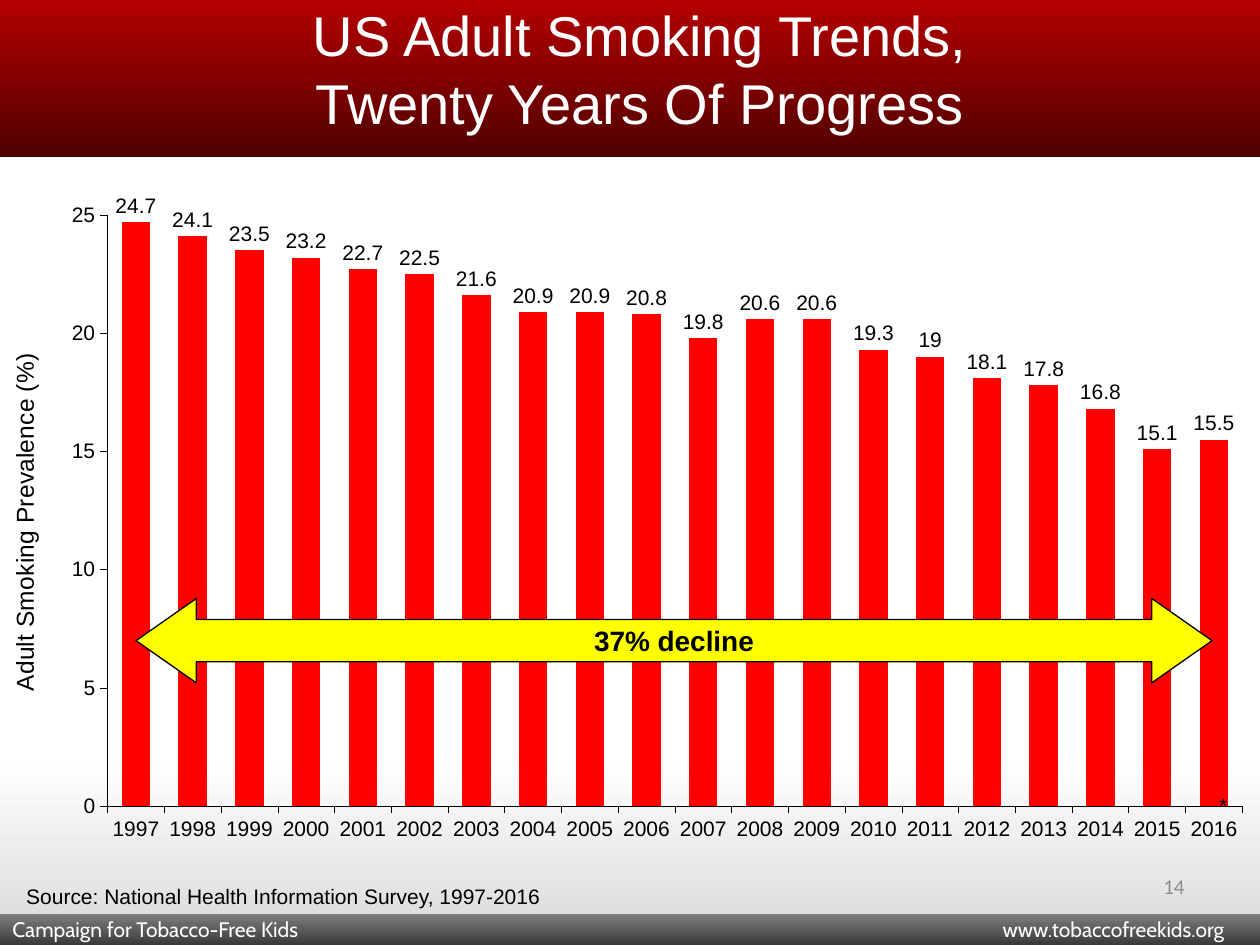
from lxml import etree
from pptx import Presentation
from pptx.chart.data import CategoryChartData
from pptx.dml.color import RGBColor
from pptx.enum import chart as ch, shapes, text
from pptx.oxml import parse_xml
from pptx.oxml.ns import nsdecls, qn
from pptx.util import Inches, Pt

COLORS = {
    "white": "FFFFFF", "black": "000000", "bar": "FF0000", "arrow": "FFFF00",
    "page_end": "D9D9D9", "number": "8C8C8C",
    "band_top": "B40000", "band_end": "500000",
    "footer_top": "808080", "footer_end": "3A3A3A",
}
RATES = [24.7, 24.1, 23.5, 23.2, 22.7, 22.5, 21.6, 20.9, 20.9, 20.8,
         19.8, 20.6, 20.6, 19.3, 19, 18.1, 17.8, 16.8, 15.1, 15.5]


def style(font, size, color="black", name="Arial", bold=False):
    font.size, font.name, font.bold = Pt(size), name, bold
    font.color.rgb = RGBColor.from_string(COLORS[color])


def shade_down(fill, top, end, start=0):
    """Fill with a gradient from top colour to end colour, beginning at start."""
    fill.gradient()
    fill.gradient_angle = 270
    for stop, color, pos in zip(fill.gradient_stops, (top, end), (start, 1)):
        stop.color.rgb = RGBColor.from_string(COLORS[color])
        stop.position = pos


prs = Presentation()
prs.slide_width, prs.slide_height = Inches(10), Inches(7.5)
s = prs.slides.add_slide(prs.slide_layouts[5])
shade_down(s.background.fill, "white", "page_end", 0.8)

# Title band and footer band
bands = []
for top, height, name in [(0, 1.25, "band"), (7.25, 0.25, "footer")]:
    sp = s.shapes.add_shape(shapes.MSO_SHAPE.RECTANGLE, 0, Inches(top),
                            Inches(10), Inches(height))
    sp.shadow.inherit = False
    sp.line.fill.background()
    shade_down(sp.fill, name + "_top", name + "_end")
    bands.append(sp)
band, footer = bands

tf = footer.text_frame
tf.vertical_anchor = text.MSO_ANCHOR.MIDDLE
tf.margin_top = tf.margin_bottom = 0
p = tf.paragraphs[0]
p.text = "Campaign for Tobacco-Free Kids\twww.tobaccofreekids.org"
p.alignment = text.PP_ALIGN.LEFT
tabs = etree.SubElement(p._p.get_or_add_pPr(), qn("a:tabLst"))
etree.SubElement(tabs, qn("a:tab"), pos=str(Inches(9.62)), algn="r")
for r in p.runs:
    style(r.font, 12, "white", "Cabin")

# Title
title = s.shapes.title
band.element.addnext(title.element)
title.left, title.top = Inches(0.08), Inches(0.08)
title.width, title.height = Inches(10), Inches(0.92)
tf = title.text_frame
tf.text = "US Adult Smoking Trends,\vTwenty Years Of Progress"
tf.vertical_anchor = text.MSO_ANCHOR.MIDDLE
tf.paragraphs[0].alignment = text.PP_ALIGN.CENTER
for r in tf.paragraphs[0].runs:
    style(r.font, 32, "white")

# Chart
data = CategoryChartData()
data.categories = [str(1997 + i) for i in range(len(RATES))]
data.add_series("Series 1", RATES)
chart = s.shapes.add_chart(ch.XL_CHART_TYPE.COLUMN_CLUSTERED, Inches(-0.06),
                           Inches(1.47), Inches(10.04), Inches(5.5), data).chart
chart.has_legend = chart.has_title = False
style(chart.font, 12)

for axis in (chart.category_axis, chart.value_axis):
    axis.has_major_gridlines = False
    axis.major_tick_mark = ch.XL_TICK_MARK.OUTSIDE
    axis.minor_tick_mark = ch.XL_TICK_MARK.NONE
    axis.format.line.width = Pt(0.3)
    axis.format.line.color.rgb = RGBColor.from_string(COLORS["black"])
    style(axis.tick_labels.font, 12)
chart.category_axis.tick_label_position = ch.XL_TICK_LABEL_POSITION.LOW

axis = chart.value_axis
axis.minimum_scale, axis.maximum_scale, axis.major_unit = 0, 25, 5
tf = axis.axis_title.text_frame
tf.text = "Adult Smoking Prevalence (%)"
style(tf.paragraphs[0].runs[0].font, 14)

plot = chart.plots[0]
plot.gap_width = 100
plot.vary_by_categories = False
fill = plot.series[0].format.fill
fill.solid()
fill.fore_color.rgb = RGBColor.from_string(COLORS["bar"])
plot.has_data_labels = True
labels = plot.data_labels
labels.show_value = True
labels.position = ch.XL_LABEL_POSITION.OUTSIDE_END
style(labels.font, 12)

area = chart.element.find(".//" + qn("c:plotArea"))
for old in area.findall(qn("c:layout")):
    area.remove(old)
area.insert(0, parse_xml(
    f'<c:layout {nsdecls("c")}><c:manualLayout><c:layoutTarget val="inner"/>'
    '<c:xMode val="edge"/><c:yMode val="edge"/><c:x val="0.091"/>'
    '<c:y val="0.043"/><c:w val="0.897"/><c:h val="0.853"/>'
    '</c:manualLayout></c:layout>'))

# Decline arrow
arrow = s.shapes.add_shape(shapes.MSO_SHAPE.LEFT_RIGHT_ARROW, Inches(1.08),
                           Inches(4.75), Inches(8.54), Inches(0.67))
arrow.adjustments[0], arrow.adjustments[1] = 0.5, 0.715
arrow.shadow.inherit = False
arrow.fill.solid()
arrow.fill.fore_color.rgb = RGBColor.from_string(COLORS["arrow"])
arrow.line.color.rgb = RGBColor.from_string(COLORS["black"])
arrow.line.width = Pt(0.75)
tf = arrow.text_frame
tf.text = "37% decline"
tf.word_wrap = False
tf.vertical_anchor = text.MSO_ANCHOR.MIDDLE
p = tf.paragraphs[0]
p.alignment = text.PP_ALIGN.CENTER
style(p.runs[0].font, 16, bold=True)

# Source, footnote mark and slide number
for words, left, top, width, height, color, font, align in [
    ("Source: National Health Information Survey, 1997-2016",
     0.11, 6.96, 4.31, 0.3, "black", "Arial", text.PP_ALIGN.LEFT),
    ("*", 9.58, 6.24, 0.27, 0.3, "black", "Arial", text.PP_ALIGN.LEFT),
    ("14", 7.17, 6.83, 2.33, 0.4, "number", "Calibri", text.PP_ALIGN.RIGHT),
]:
    tf = s.shapes.add_textbox(Inches(left), Inches(top), Inches(width),
                              Inches(height)).text_frame
    tf.text = words
    tf.word_wrap = False
    tf.vertical_anchor = text.MSO_ANCHOR.MIDDLE
    p = tf.paragraphs[0]
    p.alignment = align
    style(p.runs[0].font, 12, color, font)
    if align == text.PP_ALIGN.RIGHT:
        tf.word_wrap = True

prs.save("out.pptx")
